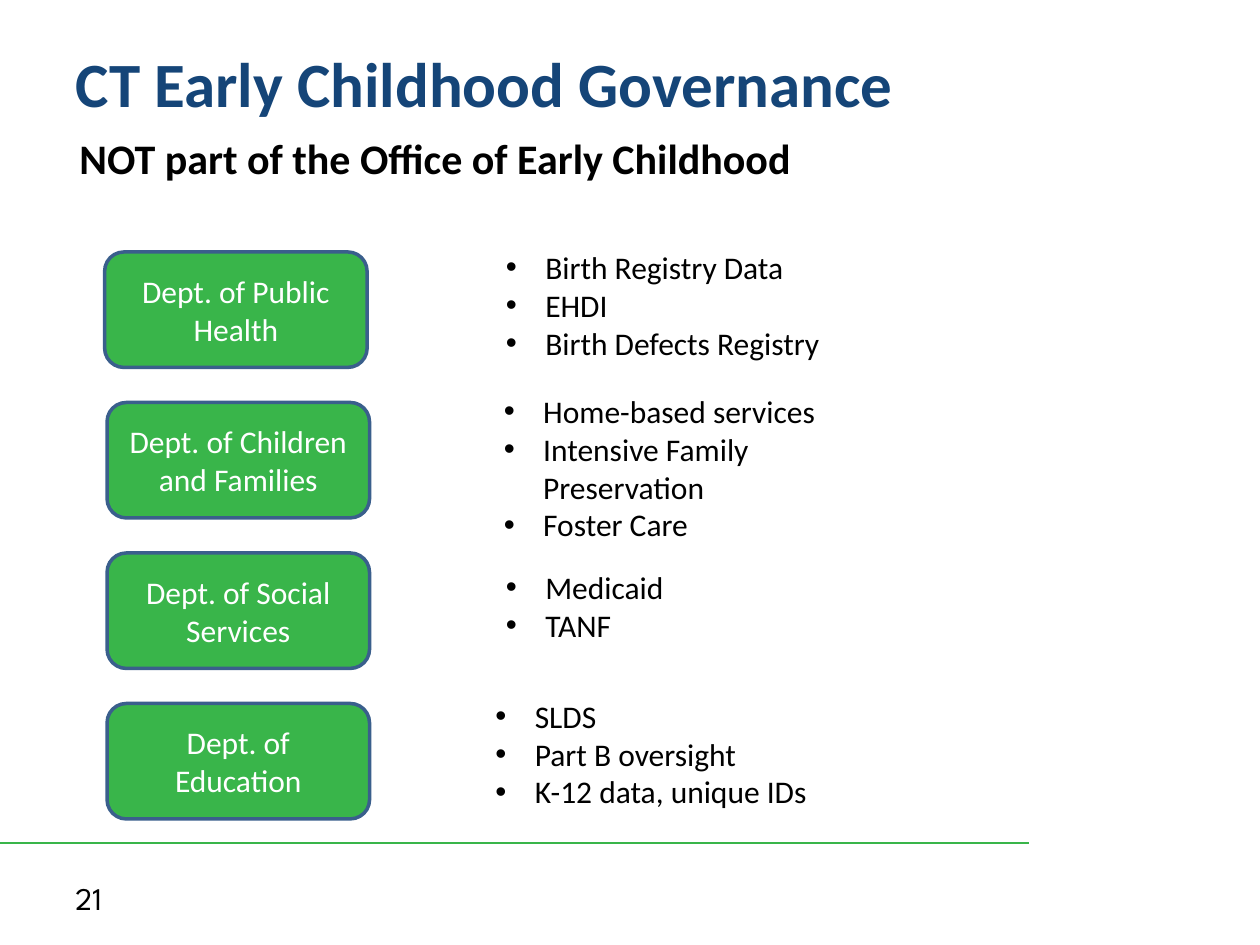
from lxml import etree
from pptx import Presentation
from pptx.dml.color import RGBColor
from pptx.enum import shapes, text
from pptx.oxml import ns
from pptx.util import Pt

NAVY = RGBColor(0x15, 0x45, 0x78)
GREEN = RGBColor(0x39, 0xB5, 0x4A)
OUTLINE = RGBColor(0x3A, 0x5F, 0x8C)
BLACK = RGBColor(0, 0, 0)
WHITE = RGBColor(255, 255, 255)

BOX_TOP, BOX_PITCH = 144, 86
LINE_HEIGHT = 22

# Department, box left, list left, list top, list items
DEPARTMENTS = [
    ("Dept. of Public Health", 59.8, 282, 138.2,
     ["Birth Registry Data", "EHDI", "Birth Defects Registry"]),
    ("Dept. of Children and Families", 61.2, 280.8, 220.5,
     ["Home-based services", "Intensive Family Preservation", "Foster Care"]),
    ("Dept. of Social Services", 61.2, 282, 321,
     ["Medicaid", "TANF"]),
    ("Dept. of Education", 61.2, 276, 394.6,
     ["SLDS", "Part B oversight", "K-12 data, unique IDs"]),
]


def points(*lengths):
    return [Pt(length) for length in lengths]


def add_span(para, words, size, color, bold=False, font="Calibri"):
    span = para.add_run()
    span.text = words
    span.font.name = font
    span.font.size = Pt(size)
    span.font.bold = bold
    span.font.color.rgb = color


def set_bullet(para, symbol=None, indent=0):
    properties = para._p.get_or_add_pPr()
    properties.set("marL", str(Pt(indent)))
    properties.set("indent", str(-Pt(indent)))
    if symbol:
        font = etree.SubElement(properties, ns.qn("a:buFont"))
        font.set("typeface", "Arial")
        etree.SubElement(properties, ns.qn("a:buChar")).set("char", symbol)
    else:
        etree.SubElement(properties, ns.qn("a:buNone"))


def fill_placeholder(holder, place, words, size, color):
    holder.left, holder.top, holder.width, holder.height = points(*place)
    frame = holder.text_frame
    frame.word_wrap = True
    frame.auto_size = text.MSO_AUTO_SIZE.NONE
    frame.vertical_anchor = text.MSO_ANCHOR.TOP
    para = frame.paragraphs[0]
    para.alignment = text.PP_ALIGN.LEFT
    para.space_before = Pt(0)
    set_bullet(para)
    add_span(para, words, size, color, bold=True)


def add_department(page, name, left, top):
    box = page.shapes.add_shape(shapes.MSO_SHAPE.ROUNDED_RECTANGLE,
                                *points(left, top, 150, 66))
    box.shadow.inherit = False
    box.fill.solid()
    box.fill.fore_color.rgb = GREEN
    box.line.color.rgb = OUTLINE
    box.line.width = Pt(2)
    frame = box.text_frame
    frame.word_wrap = True
    frame.vertical_anchor = text.MSO_ANCHOR.MIDDLE
    para = frame.paragraphs[0]
    para.alignment = text.PP_ALIGN.CENTER
    add_span(para, name, 18, WHITE)


def add_list(page, items, left, top):
    height = LINE_HEIGHT * len(items) + 7
    box = page.shapes.add_textbox(*points(left, top, 234, height))
    frame = box.text_frame
    frame.word_wrap = True
    for index, item in enumerate(items):
        para = frame.add_paragraph() if index else frame.paragraphs[0]
        set_bullet(para, "•", 22.5)
        add_span(para, item, 18, BLACK)


def add_footer(page):
    rule = page.shapes.add_connector(shapes.MSO_CONNECTOR.STRAIGHT,
                                     *points(0, 481.7, 588, 481.7))
    rule.line.color.rgb = GREEN
    rule.line.width = Pt(1.5)
    etree.SubElement(rule._element.spPr, ns.qn("a:effectLst"))

    number = page.shapes.add_textbox(*points(36, 498.5, 168, 28.8))
    number.text_frame.word_wrap = True
    number.text_frame.vertical_anchor = text.MSO_ANCHOR.MIDDLE
    add_span(number.text_frame.paragraphs[0], "21", 18, BLACK,
             font="League Spartan")


def main():
    deck = Presentation()
    deck.slide_width, deck.slide_height = points(720, 540)
    page = deck.slides.add_slide(deck.slide_layouts[1])

    # Footer rule and page number
    add_footer(page)

    # Title and subtitle
    fill_placeholder(page.shapes.title, (36, 21.6, 648, 90),
                     "CT Early Childhood Governance", 36, NAVY)
    fill_placeholder(page.placeholders[1], (38.2, 72, 617.8, 363.6),
                     "NOT part of the Office of Early Childhood", 24, BLACK)

    # Departments with their programs
    for row, (name, box_left, list_left, list_top, items) in enumerate(DEPARTMENTS):
        add_department(page, name, box_left, BOX_TOP + row * BOX_PITCH)
        add_list(page, items, list_left, list_top)

    deck.save("out.pptx")


if __name__ == "__main__":
    main()
